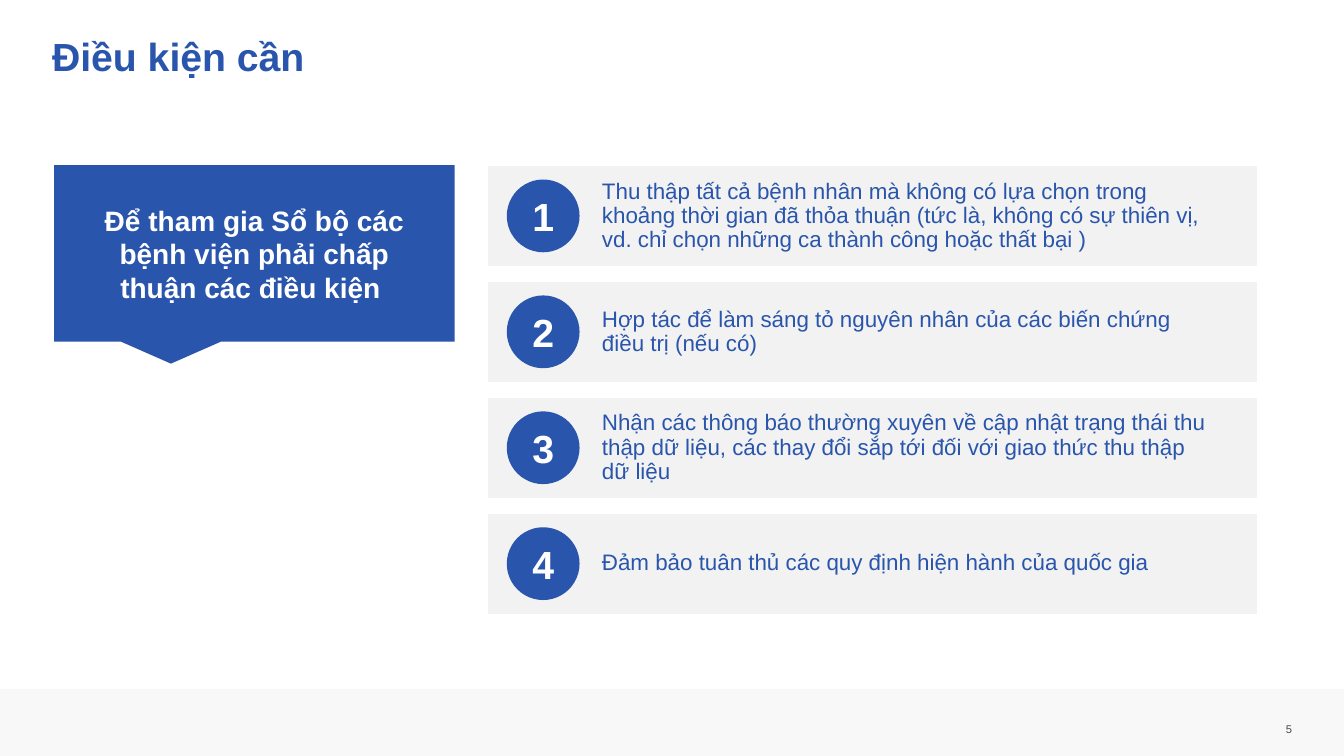
import pptx
import pptx.util
import pptx.dml.color
import pptx.enum.shapes
import pptx.enum.text
import pptx.oxml
import pptx.oxml.ns

Pt = pptx.util.Pt
SHAPE = pptx.enum.shapes.MSO_SHAPE
ALIGN = pptx.enum.text.PP_ALIGN
ANCHOR = pptx.enum.text.MSO_ANCHOR

# Content
TITLE = "Điều kiện cần"
CALLOUT = "Để tham gia Sổ bộ các bệnh viện phải chấp thuận các điều kiện "
CONDITIONS = [
    "Thu thập tất cả bệnh nhân mà không có lựa chọn trong khoảng thời gian đã "
    "thỏa thuận (tức là, không có sự thiên vị, vd. chỉ chọn những ca thành công "
    "hoặc thất bại )",
    "Hợp tác để làm sáng tỏ nguyên nhân của các biến chứng điều trị (nếu có)",
    "Nhận các thông báo thường xuyên về cập nhật trạng thái thu thập dữ liệu, "
    "các thay đổi sắp tới đối với giao thức thu thập dữ liệu",
    "Đảm bảo tuân thủ các quy định hiện hành của quốc gia",
]
PAGE_NUMBER = "5"
COLORS = {"blue": "2955AC", "panel": "F2F2F2", "white": "FFFFFF", "gray": "484848"}

# Layout in points
PAGE_WIDTH, PAGE_HEIGHT = 960, 540
FOOTER_HEIGHT = 48
CONTENT_TOP = 118
ROW_LEFT, ROW_WIDTH, ROW_HEIGHT, ROW_STEP = 348, 550.5, 72.5, 82.8
BADGE_LEFT, BADGE_SIZE = 362, 52


def color(name):
    return pptx.dml.color.RGBColor.from_string(COLORS[name])


def write(box, text, size=16, ink="blue", bold=False, align=ALIGN.LEFT,
          anchor=ANCHOR.MIDDLE, insets=(7.2, 3.6, 7.2, 3.6), spacing=1.0):
    frame = box.text_frame
    frame.word_wrap = True
    frame.auto_size = pptx.enum.text.MSO_AUTO_SIZE.NONE
    frame.vertical_anchor = anchor
    (frame.margin_left, frame.margin_top,
     frame.margin_right, frame.margin_bottom) = map(Pt, insets)
    para = frame.paragraphs[0]
    para.alignment = align
    para.line_spacing = spacing
    span = para.add_run()
    span.text = text
    span.font.name = "Arial"
    span.font.size = Pt(size)
    span.font.bold = bold
    span.font.color.rgb = color(ink)


def add_block(page, kind, left, top, width, height, fill, outline=None):
    block = page.shapes.add_shape(kind, Pt(left), Pt(top), Pt(width), Pt(height))
    block.shadow.inherit = False
    block.fill.solid()
    block.fill.fore_color.rgb = color(fill)
    if outline:
        block.line.color.rgb = color(outline)
        block.line.width = Pt(1)
    else:
        block.line.fill.background()
    return block


def main():
    deck = pptx.Presentation()
    deck.slide_width, deck.slide_height = Pt(PAGE_WIDTH), Pt(PAGE_HEIGHT)
    page = deck.slides.add_slide(deck.slide_layouts[5])

    # Footer band, half transparent, and page number
    band = add_block(page, SHAPE.RECTANGLE, 0, PAGE_HEIGHT - FOOTER_HEIGHT,
                     PAGE_WIDTH, FOOTER_HEIGHT, "panel")
    tint = band.fill._xPr.find(".//" + pptx.oxml.ns.qn("a:srgbClr"))
    tint.append(pptx.oxml.parse_xml(
        f'<a:alpha {pptx.oxml.ns.nsdecls("a")} val="50000"/>'))
    number = page.shapes.add_textbox(Pt(895), Pt(501), Pt(28), Pt(28))
    write(number, PAGE_NUMBER, size=8, ink="gray", align=ALIGN.RIGHT,
          anchor=ANCHOR.BOTTOM, insets=(7.2, 3.6, 0, 3.6))

    # Title
    title = page.shapes.title
    title.left, title.top, title.width, title.height = map(Pt, (30, 23, 754, 60.5))
    write(title, TITLE, size=28, bold=True, anchor=ANCHOR.TOP, spacing=0.9)

    # Numbered conditions
    for index, condition in enumerate(CONDITIONS):
        top = CONTENT_TOP + index * ROW_STEP
        row = add_block(page, SHAPE.RECTANGLE, ROW_LEFT, top, ROW_WIDTH, ROW_HEIGHT,
                        "panel", outline="white")
        write(row, condition, insets=(82, 6, 31, 6), spacing=0.9)
        badge = add_block(page, SHAPE.OVAL, BADGE_LEFT,
                          top + (ROW_HEIGHT - BADGE_SIZE) / 2,
                          BADGE_SIZE, BADGE_SIZE, "blue")
        write(badge, str(index + 1), size=28, ink="white", bold=True,
              align=ALIGN.CENTER)

    # Callout
    callout = add_block(page, SHAPE.RECTANGULAR_CALLOUT, 38.7, CONTENT_TOP,
                        286, 126, "blue")
    write(callout, CALLOUT, size=20, ink="white", bold=True, align=ALIGN.CENTER,
          insets=(28, 3.6, 28, 3.6))

    deck.save("out.pptx")


if __name__ == "__main__":
    main()
